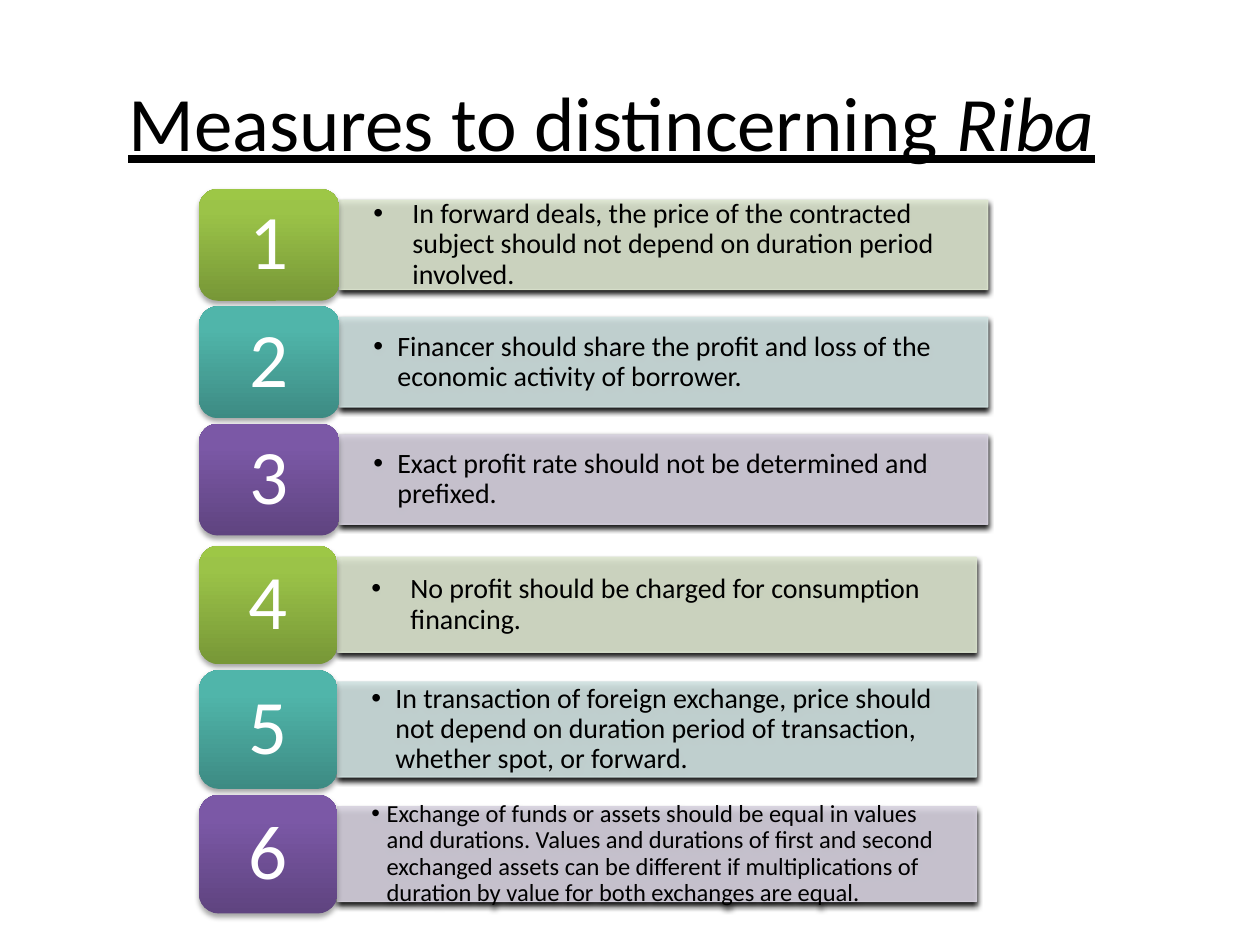
from lxml import etree
from pptx import Presentation
from pptx.dml.color import RGBColor
from pptx.enum.shapes import MSO_SHAPE as SHAPE
from pptx.enum.text import MSO_ANCHOR as ANCHOR, PP_ALIGN as ALIGN
from pptx.oxml.ns import qn
from pptx.util import Inches, Pt

FONT = "Calibri"
WIDE, HIGH = 10, 7.5
PLATE_W = 0.178    # share of the list's width
GAP = 0.05         # gap between rows, share of a plate's height
BAR_H = 0.8        # share of a plate's height

# Bar colour, then plate colours from bottom to top
HUES = [("DEE7D1", ("779737", "9BC348", "9DC746")),
        ("D2E3E2", ("3D8B83", "50B5AA", "4EB8AC")),
        ("D8D3E0", ("5F4480", "7B58A6", "7C57A8"))]
STOPS = (0, 80, 100)

# Text, size, hanging indent
UPPER = [("In forward deals, the price of the contracted subject should not "
          "depend on duration period involved.", 16, 0.31),
         ("Financer should share the profit and loss of the economic activity "
          "of borrower.", 16, 0.19),
         ("Exact profit rate should not be determined and prefixed.", 16, 0.19)]
LOWER = [("No profit should be charged for consumption financing.", 16, 0.31),
         ("In transaction of foreign exchange, price should not depend on "
          "duration period of transaction, whether spot, or forward.", 16, 0.19),
         ("Exchange of funds or assets should be equal in values and durations. "
          "Values and durations of first and second exchanged assets can be "
          "different if multiplications of duration by value for both exchanges "
          "are equal.", 14, 0.12)]


def rgb(code):
    return RGBColor.from_string(code)


def node(top, tag, **attrs):
    return etree.SubElement(top, qn(tag), {k: str(v) for k, v in attrs.items()})


def style(par, size, color):
    par.font.name, par.font.size = FONT, Pt(size)
    par.font.color.rgb = rgb(color)


def fade(fill):
    """Make a solid fill slightly see-through."""
    for tint in fill.iter(qn("a:srgbClr")):
        node(tint, "a:alpha", val=90000)


def shade(shape):
    """Give a shape a soft shadow below."""
    shape.shadow.inherit = False
    glow = node(shape._element.spPr.find(qn("a:effectLst")), "a:outerShdw",
                blurRad=Pt(3.1), dist=Pt(1.8), dir=5400000, rotWithShape=0)
    node(node(glow, "a:srgbClr", val="000000"), "a:alpha", val=35000)


def block(slide, kind, box, inset):
    """Add a shadowed shape and return it with its first paragraph."""
    shape = slide.shapes.add_shape(kind, *map(Inches, box))
    shade(shape)
    frame = shape.text_frame
    frame.word_wrap, frame.vertical_anchor = True, ANCHOR.MIDDLE
    frame.margin_left = frame.margin_right = Inches(inset)
    frame.margin_top = frame.margin_bottom = Inches(inset / 2)
    par = frame.paragraphs[0]
    par.line_spacing = 0.9
    return shape, par


def add_bar(slide, box, color, text, size, hang):
    bar, par = block(slide, SHAPE.RECTANGLE, box, 0.27)
    bar.fill.solid()
    bar.fill.fore_color.rgb = bar.line.color.rgb = rgb(color)
    bar.line.width = Pt(0.75)
    fade(bar._element.spPr)
    par.text, par.alignment = text, ALIGN.LEFT
    props = par._p.get_or_add_pPr()
    props.set("marL", str(Inches(hang)))
    props.set("indent", str(-Inches(hang)))
    node(props, "a:buFont", typeface="Arial")
    node(props, "a:buChar", char="•")
    style(par, size, "000000")


def add_plate(slide, box, colors, num):
    plate, par = block(slide, SHAPE.ROUNDED_RECTANGLE, box, 0.18)
    plate.fill.gradient()
    plate.fill.gradient_angle = 90
    stops = plate._element.spPr.find(".//" + qn("a:gsLst"))
    stops.clear()
    for pos, color in zip(STOPS, colors):
        node(node(stops, "a:gs", pos=pos * 1000), "a:srgbClr", val=color)
    plate.line.fill.background()
    par.text, par.alignment = str(num), ALIGN.CENTER
    style(par, 44, "FFFFFF")


def add_list(slide, box, rows, first):
    """Stack numbered rows so that they fill the box."""
    x, y, w, h = box
    tall = h / (len(rows) + GAP * (len(rows) - 1))
    side, thin = w * PLATE_W, tall * BAR_H
    for i, (row, (pale, deep)) in enumerate(zip(rows, HUES)):
        top = y + i * tall * (1 + GAP)
        add_bar(slide, (x + side, top + (tall - thin) / 2, w - side, thin),
                pale, *row)
        add_plate(slide, (x, top, side, tall), deep, first + i)


def add_title(slide, box):
    frame = slide.shapes.add_textbox(*map(Inches, box)).text_frame
    frame.word_wrap, frame.vertical_anchor = True, ANCHOR.MIDDLE
    par = frame.paragraphs[0]
    par.add_run().text = "Measures to distincerning "
    name = par.add_run()
    name.text, name.font.italic = "Riba", True
    style(par, 44, "000000")
    for run in par.runs:
        run.font.underline = True


def main():
    deck = Presentation()
    deck.slide_width, deck.slide_height = Inches(WIDE), Inches(HIGH)
    slide = deck.slides.add_slide(deck.slide_layouts[6])
    add_list(slide, (1.58, 1.5, 6.26, 2.75), UPPER, 1)
    add_title(slide, (0.92, 0.33, 8.83, 1.25))
    add_list(slide, (1.58, 4.33, 6.17, 2.92), LOWER, 4)
    deck.save("out.pptx")


if __name__ == "__main__":
    main()
